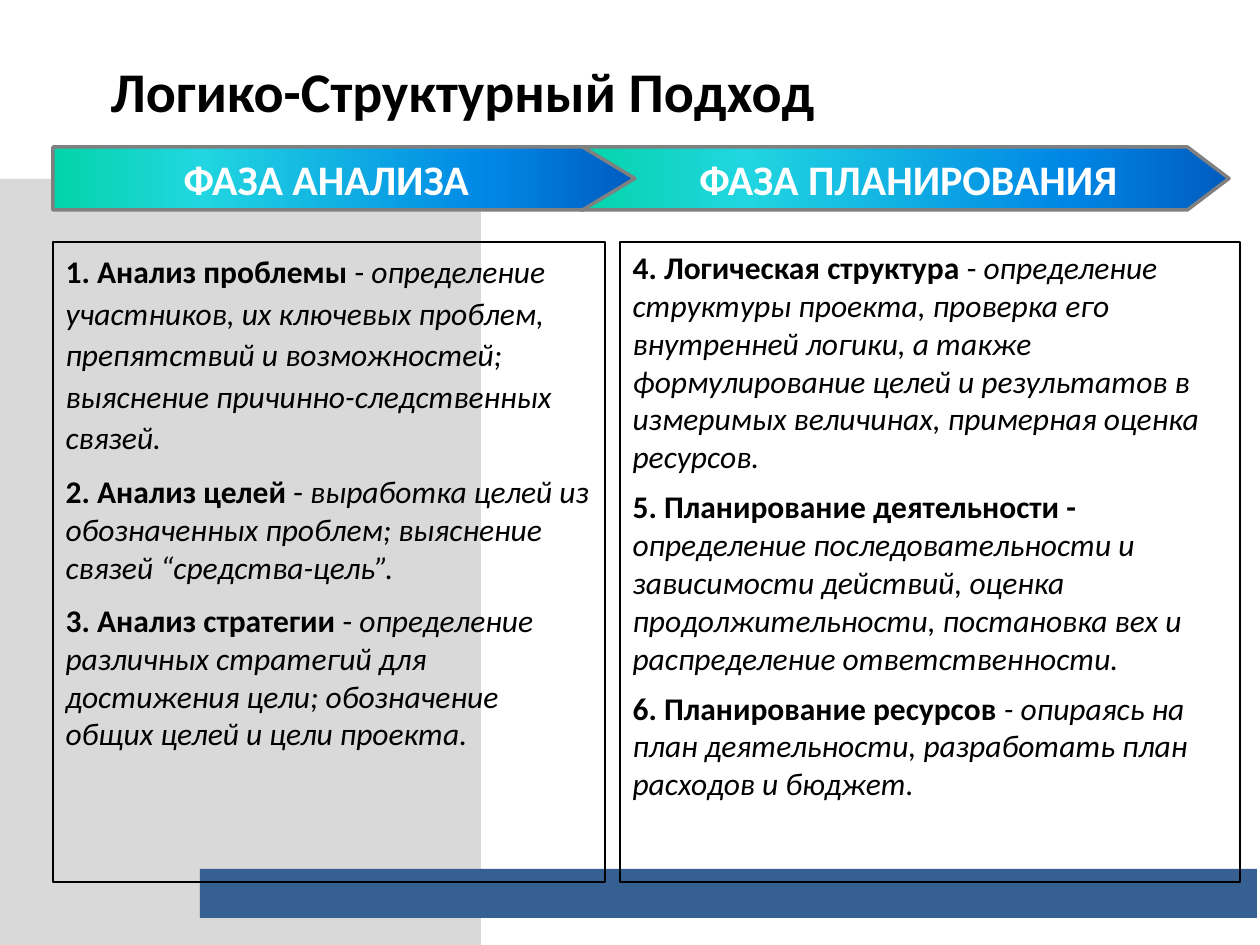
from typing import NamedTuple

from lxml.etree import SubElement
from pptx import Presentation
from pptx.dml.color import RGBColor as Rgb
from pptx.enum.shapes import MSO_SHAPE as Preset
from pptx.enum.text import MSO_ANCHOR as Anchor, MSO_AUTO_SIZE as AutoSize, PP_ALIGN as Align
from pptx.oxml.ns import qn
from pptx.util import Emu, Inches, Pt

EMU_PER_PX = 914400 / 126
FONT = "Calibri"
COLORS = {
    "gray": "D9D9D9", "blue": "376092", "border": "808080",
    "black": "000000", "white": "FFFFFF",
}
GRADIENT = [(0, "03D4A8"), (25, "21D6E0"), (75, "0087E6"), (100, "005CBF")]


class Area(NamedTuple):
    left: int
    top: int
    width: int
    height: int


class Phase(NamedTuple):
    name: str
    area: Area
    point: float
    inset: int


class Step(NamedTuple):
    heading: str
    dash: str
    detail: str
    spacing: float = 1.0


class Column(NamedTuple):
    area: Area
    gap: int
    steps: list[Step]


PHASES = [
    Phase("ФАЗА ПЛАНИРОВАНИЯ", Area(580, 147, 649, 63), 0.66, 41),
    Phase("ФАЗА АНАЛИЗА ", Area(53, 147, 582, 63), 0.83, 13),
]
COLUMNS = [
    Column(Area(53, 242, 552, 640), 9, [
        Step("1. Анализ проблемы ", "- ",
             "определение участников, их ключевых проблем, препятствий и "
             "возможностей; выяснение причинно-следственных связей.", 1.1),
        Step("2. Анализ целей ", "- ",
             "выработка целей из обозначенных проблем; выяснение связей “средства-цель”."),
        Step("3. Анализ стратегии", " - ",
             "определение различных стратегий для достижения цели; "
             "обозначение общих целей и цели проекта."),
    ]),
    Column(Area(620, 242, 620, 640), 7, [
        Step("4. Логическая структура", " - ",
             "определение структуры проекта, проверка его внутренней логики, "
             "а также формулирование целей и результатов в измеримых величинах, "
             "примерная оценка ресурсов."),
        Step("5. Планирование деятельности - ", "",
             "определение последовательности и зависимости действий, оценка "
             "продолжительности, постановка вех и распределение ответственности."),
        Step("6. Планирование ресурсов", "",
             " - опираясь на план деятельности, разработать план расходов и бюджет."),
    ]),
]


def px(value: int) -> Emu:
    return Emu(round(value * EMU_PER_PX))


def color(name: str) -> Rgb:
    return Rgb.from_string(COLORS[name])


def add_span(para, text: str, size: int, bold=False, italic=False, ink="black") -> None:
    span = para.add_run()
    span.text = text
    font = span.font
    font.name, font.size, font.bold, font.italic = FONT, Pt(size), bold, italic
    font.color.rgb = color(ink)


def place(box, area: Area) -> None:
    box.left, box.top, box.width, box.height = map(px, area)


def add_preset(page, preset, area: Area):
    shape = page.shapes.add_shape(preset, *map(px, area))
    shape.shadow.inherit = False
    return shape


def add_block(page, area: Area, fill: str) -> None:
    block = add_preset(page, Preset.RECTANGLE, area)
    block.fill.solid()
    block.fill.fore_color.rgb = color(fill)
    block.line.fill.background()


def fill_gradient(shape) -> None:
    shape.fill.gradient()
    shape.fill.gradient_angle = 0
    stops = shape.element.spPr.find(qn("a:gradFill")).find(qn("a:gsLst"))
    for stop in list(stops):
        stops.remove(stop)
    for percent, value in GRADIENT:
        stop = SubElement(stops, qn("a:gs"), pos=str(percent * 1000))
        SubElement(stop, qn("a:srgbClr"), val=value)


def add_phase(page, phase: Phase) -> None:
    arrow = add_preset(page, Preset.PENTAGON, phase.area)
    arrow.adjustments[0] = phase.point
    fill_gradient(arrow)
    arrow.line.color.rgb = color("border")
    arrow.line.width = Pt(2)
    frame = arrow.text_frame
    frame.word_wrap = False
    frame.vertical_anchor = Anchor.MIDDLE
    frame.margin_left = px(phase.inset)
    para = frame.paragraphs[0]
    para.alignment = Align.CENTER
    add_span(para, phase.name, 24, bold=True, ink="white")


def fill_column(box, column: Column) -> None:
    place(box, column.area)
    box.line.color.rgb = color("black")
    box.line.width = Pt(1)
    frame = box.text_frame
    frame.auto_size = AutoSize.NONE
    for index, step in enumerate(column.steps):
        para = frame.add_paragraph() if index else frame.paragraphs[0]
        para.space_before = Pt(column.gap if index else 0)
        para.line_spacing = step.spacing
        add_span(para, step.heading, 18, bold=True)
        if step.dash:
            add_span(para, step.dash, 18)
        add_span(para, step.detail, 18, italic=True)
        # Plain paragraphs: no bullet, no hanging indent
        properties = para._p.get_or_add_pPr()
        properties.set("marL", "0")
        properties.set("indent", "0")
        SubElement(properties, qn("a:buNone"))


def fill_title(box, text: str) -> None:
    place(box, Area(98, 39, 944, 102))
    frame = box.text_frame
    frame.auto_size = AutoSize.NONE
    frame.vertical_anchor = Anchor.MIDDLE
    para = frame.paragraphs[0]
    para.alignment = Align.LEFT
    add_span(para, text, 32, bold=True)


def main() -> None:
    deck = Presentation()
    deck.slide_width, deck.slide_height = Inches(10), Inches(7.5)
    page = deck.slides.add_slide(deck.slide_layouts[3])
    title, *bodies = page.placeholders

    # Background blocks
    add_block(page, Area(0, 179, 481, 770), "gray")
    add_block(page, Area(200, 869, 1057, 49), "blue")

    # Phase arrows, the first phase overlapping the second
    for phase in PHASES:
        add_phase(page, phase)

    # Title and step lists, brought in front of the blocks
    fill_title(title, "Логико-Структурный Подход")
    for body, column in zip(bodies, COLUMNS):
        fill_column(body, column)
    for box in (title, *bodies):
        page.shapes.element.append(box.element)

    deck.save("out.pptx")


if __name__ == "__main__":
    main()
